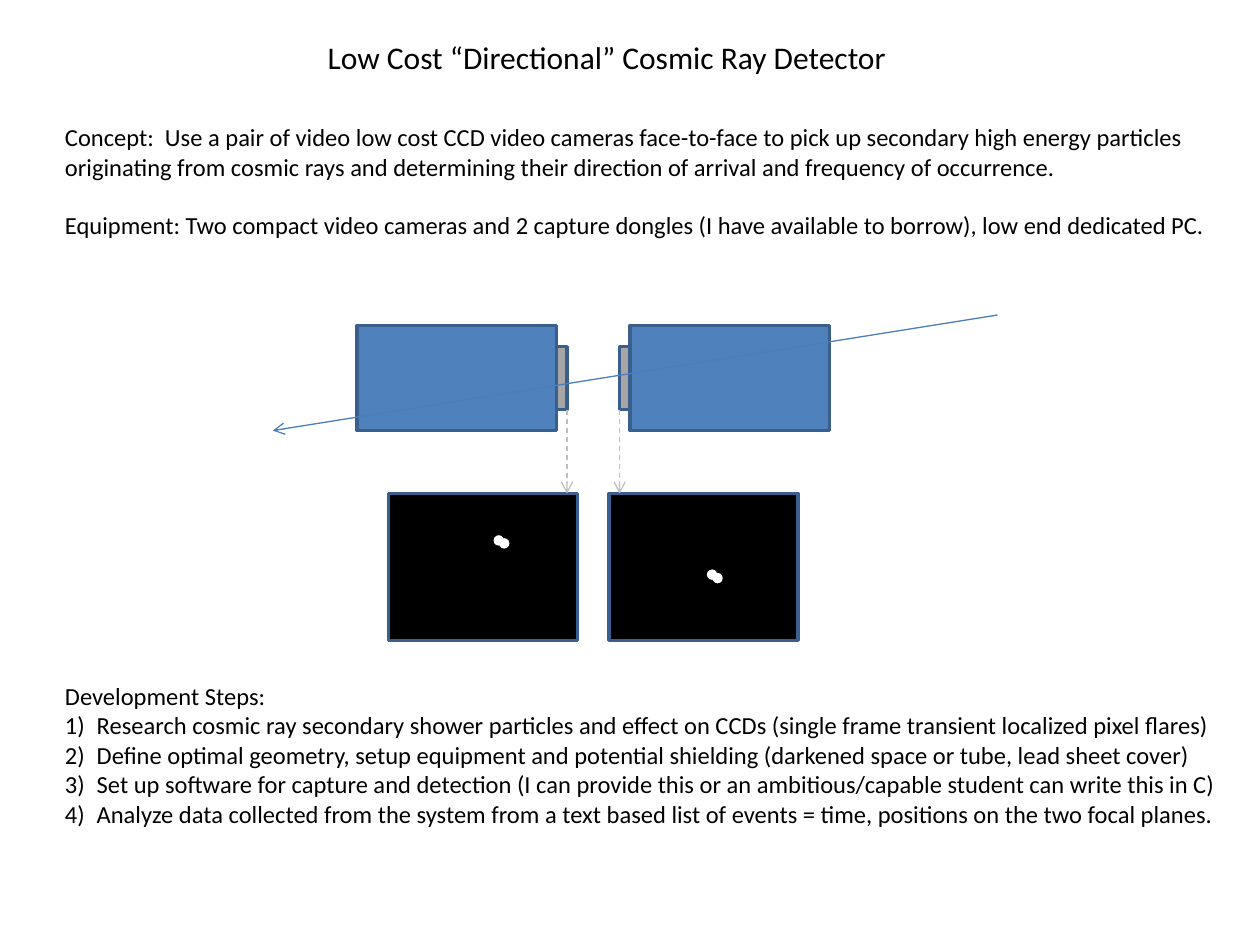
from lxml.etree import SubElement
from pptx import Presentation
from pptx.dml.color import RGBColor
from pptx.enum.dml import MSO_LINE
from pptx.enum.shapes import MSO_CONNECTOR, MSO_SHAPE
from pptx.enum.text import MSO_ANCHOR, PP_ALIGN
from pptx.oxml.ns import qn
from pptx.util import Cm, Pt

COLORS = {
    "text": "000000",
    "camera": "4F81BD",
    "outline": "3A5F8C",
    "sensor": "A6A6A6",
    "ray": "4B7EBC",
    "guide": "BFBFBF",
    "screen": "000000",
    "spot": "FFFFFF",
}
FONT = "Calibri"
LINE_HEIGHT = 16.8
CONCEPT = (
    "Concept:  Use a pair of video low cost CCD video cameras face-to-face to pick up "
    "secondary high energy particles originating from cosmic rays and determining their "
    "direction of arrival and frequency of occurrence."
)
EQUIPMENT = (
    "Equipment: Two compact video cameras and 2 capture dongles "
    "(I have available to borrow), low end dedicated PC."
)
STEPS = [
    "Research cosmic ray secondary shower particles and effect on CCDs (single frame transient localized pixel flares)",
    "Define optimal geometry, setup equipment and potential shielding (darkened space or tube, lead sheet cover)",
    "Set up software for capture and detection (I can provide this or an ambitious/capable student can write this in C)",
    "Analyze data collected from the system from a text based list of events = time, positions on the two focal planes.",
]


def color(name):
    return RGBColor.from_string(COLORS[name])


def add_run(para, text, size):
    span = para.add_run()
    span.text = text
    span.font.name = FONT
    span.font.size = Pt(size)
    span.font.color.rgb = color("text")


def add_title(page, text):
    title = page.shapes.title
    title.left, title.top, title.width, title.height = Cm(6.35), Cm(0.64), Cm(11.91), Cm(1.02)
    frame = title.text_frame
    frame.word_wrap = False
    frame.vertical_anchor = MSO_ANCHOR.TOP
    para = frame.paragraphs[0]
    para.alignment = PP_ALIGN.LEFT
    add_run(para, text, 18)


def number_paragraph(para):
    properties = para._p.get_or_add_pPr()
    properties.set("marL", str(Cm(0.64)))
    properties.set("indent", str(-Cm(0.64)))
    SubElement(properties, qn("a:buFont"), typeface="+mj-lt")
    SubElement(properties, qn("a:buAutoNum"), type="arabicParenR")


def add_body(page):
    box = page.shapes.add_textbox(Cm(1.06), Cm(2.34), Cm(23.7), Cm(14.63))
    frame = box.text_frame
    frame.word_wrap = True
    sections = [(CONCEPT, 0), (EQUIPMENT, 1), ("Development Steps:", 15)]
    for index, (text, gap_lines) in enumerate(sections):
        para = frame.add_paragraph() if index else frame.paragraphs[0]
        para.space_before = Pt(gap_lines * LINE_HEIGHT)
        add_run(para, text, 14)
    for text in STEPS:
        para = frame.add_paragraph()
        number_paragraph(para)
        add_run(para, text, 14)


def add_block(page, kind, left, top, width, height, fill, outline=None):
    block = page.shapes.add_shape(kind, Cm(left), Cm(top), Cm(width), Cm(height))
    block.shadow.inherit = False
    block.fill.solid()
    block.fill.fore_color.rgb = color(fill)
    if outline:
        block.line.color.rgb = color(outline)
        block.line.width = Pt(2)
    else:
        block.line.fill.background()


def add_arrow(page, start, end, line_color, dashed=False):
    arrow = page.shapes.add_connector(
        MSO_CONNECTOR.STRAIGHT, *(Cm(value) for value in (*start, *end))
    )
    arrow.line.color.rgb = color(line_color)
    arrow.line.width = Pt(0.75)
    if dashed:
        arrow.line.dash_style = MSO_LINE.DASH
    SubElement(arrow.line._get_or_add_ln(), qn("a:tailEnd"), type="arrow")
    SubElement(arrow._element.spPr, qn("a:effectLst"))


def add_screen(page, left, spots):
    add_block(page, MSO_SHAPE.RECTANGLE, left, 9.95, 3.81, 2.96, "screen", "outline")
    for spot_left, spot_top in spots:
        add_block(page, MSO_SHAPE.OVAL, spot_left, spot_top, 0.21, 0.21, "spot")


def main():
    deck = Presentation()
    deck.slide_width, deck.slide_height = Cm(25.4), Cm(19.05)
    page = deck.slides.add_slide(deck.slide_layouts[5])
    add_title(page, "Low Cost “Directional” Cosmic Ray Detector")
    add_body(page)
    for left in (7.2, 12.7):
        add_block(page, MSO_SHAPE.RECTANGLE, left, 6.56, 4.02, 2.12, "camera", "outline")
    for left in (11.22, 12.49):
        add_block(page, MSO_SHAPE.RECTANGLE, left, 6.99, 0.21, 1.27, "sensor", "outline")
    add_arrow(page, (20.11, 6.35), (5.5, 8.68), "ray")
    add_screen(page, 12.28, [(14.25, 11.48), (14.36, 11.55)])
    add_screen(page, 7.83, [(9.95, 10.79), (10.06, 10.85)])
    for x in (11.43, 12.49):
        add_arrow(page, (x, 8.26), (x, 9.95), "guide", dashed=True)
    deck.save("out.pptx")


if __name__ == "__main__":
    main()
